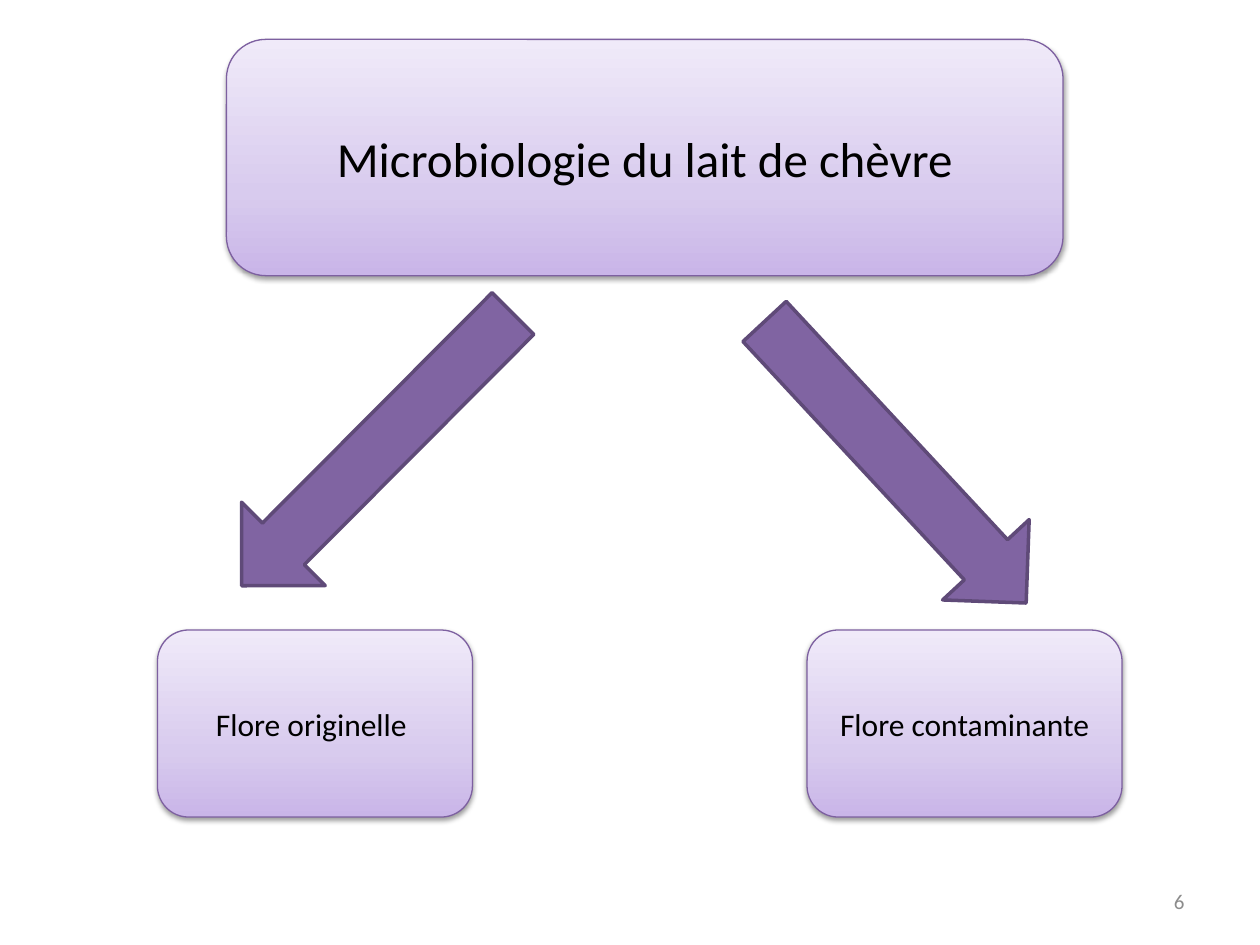
from copy import deepcopy

from lxml.etree import SubElement
from pptx import Presentation
from pptx.dml.color import RGBColor
from pptx.enum.shapes import MSO_SHAPE
from pptx.enum.text import MSO_ANCHOR, PP_ALIGN
from pptx.oxml.ns import qn
from pptx.util import Pt

GRADIENT = [(0, "C9B5E8"), (0.35, "D8CBEE"), (1, "F0EAF9")]
SHADOW = {"blurRad": Pt(3.1), "dist": Pt(1.6), "dir": 90 * 60000, "rotWithShape": 0}


def color(hex_string):
    return RGBColor.from_string(hex_string)


def apply(target, values):
    for name, value in values.items():
        setattr(target, name, value)


def write_text(shape, text, size, hex_string, alignment):
    frame = shape.text_frame
    apply(frame, {"word_wrap": True, "vertical_anchor": MSO_ANCHOR.MIDDLE})
    paragraph = frame.paragraphs[0]
    paragraph.alignment = alignment
    run = paragraph.add_run()
    run.text = text
    apply(run.font, {"name": "Calibri", "size": Pt(size)})
    run.font.color.rgb = color(hex_string)


def add_shape(slide, kind, box, line_color, line_width):
    shape = slide.shapes.add_shape(kind, *map(Pt, box))
    shape.shadow.inherit = False
    shape.line.color.rgb = color(line_color)
    shape.line.width = Pt(line_width)
    return shape


def fill_gradient(shape):
    shape.fill.gradient()
    shape.fill.gradient_angle = 90
    stop_list = shape._element.spPr.find(".//" + qn("a:gsLst"))
    stop_list.append(deepcopy(stop_list[-1]))
    for stop, (position, hex_string) in zip(shape.fill.gradient_stops, GRADIENT):
        stop.position = position
        stop.color.rgb = color(hex_string)


def add_shadow(shape):
    effects = shape._element.spPr.find(qn("a:effectLst"))
    attributes = {name: str(value) for name, value in SHADOW.items()}
    shadow = SubElement(effects, qn("a:outerShdw"), attributes)
    shadow_color = SubElement(shadow, qn("a:srgbClr"), val="000000")
    SubElement(shadow_color, qn("a:alpha"), val="38000")


def add_box(slide, box, text, size):
    shape = add_shape(slide, MSO_SHAPE.ROUNDED_RECTANGLE, box, "7D60A0", 0.75)
    fill_gradient(shape)
    add_shadow(shape)
    write_text(shape, text, size, "000000", PP_ALIGN.CENTER)


def add_arrow(slide, left, top, rotation):
    box = (left, top, 219.6, 67.5)
    shape = add_shape(slide, MSO_SHAPE.RIGHT_ARROW, box, "5F4A78", 2)
    shape.fill.solid()
    shape.fill.fore_color.rgb = color("8064A2")
    shape.rotation = rotation


def add_page_number(slide, text):
    shape = slide.shapes.add_textbox(Pt(516), Pt(500.5), Pt(168), Pt(28.75))
    write_text(shape, text, 12, "8C8C8C", PP_ALIGN.RIGHT)


def main():
    presentation = Presentation()
    apply(presentation, {"slide_width": Pt(720), "slide_height": Pt(540)})
    slide = presentation.slides.add_slide(presentation.slide_layouts[6])
    add_box(slide, (129.4, 22.5, 478.1, 135), "Microbiologie du lait de chèvre", 28)
    add_arrow(slide, 401.8, 230.4, 47.1)
    add_arrow(slide, 105.8, 223.2, 134.9)
    for left, text in ((90, "Flore originelle "), (461.2, "Flore contaminante")):
        add_box(slide, (left, 360, 180, 106.9), text, 18)
    add_page_number(slide, "6")
    presentation.save("out.pptx")


if __name__ == "__main__":
    main()
